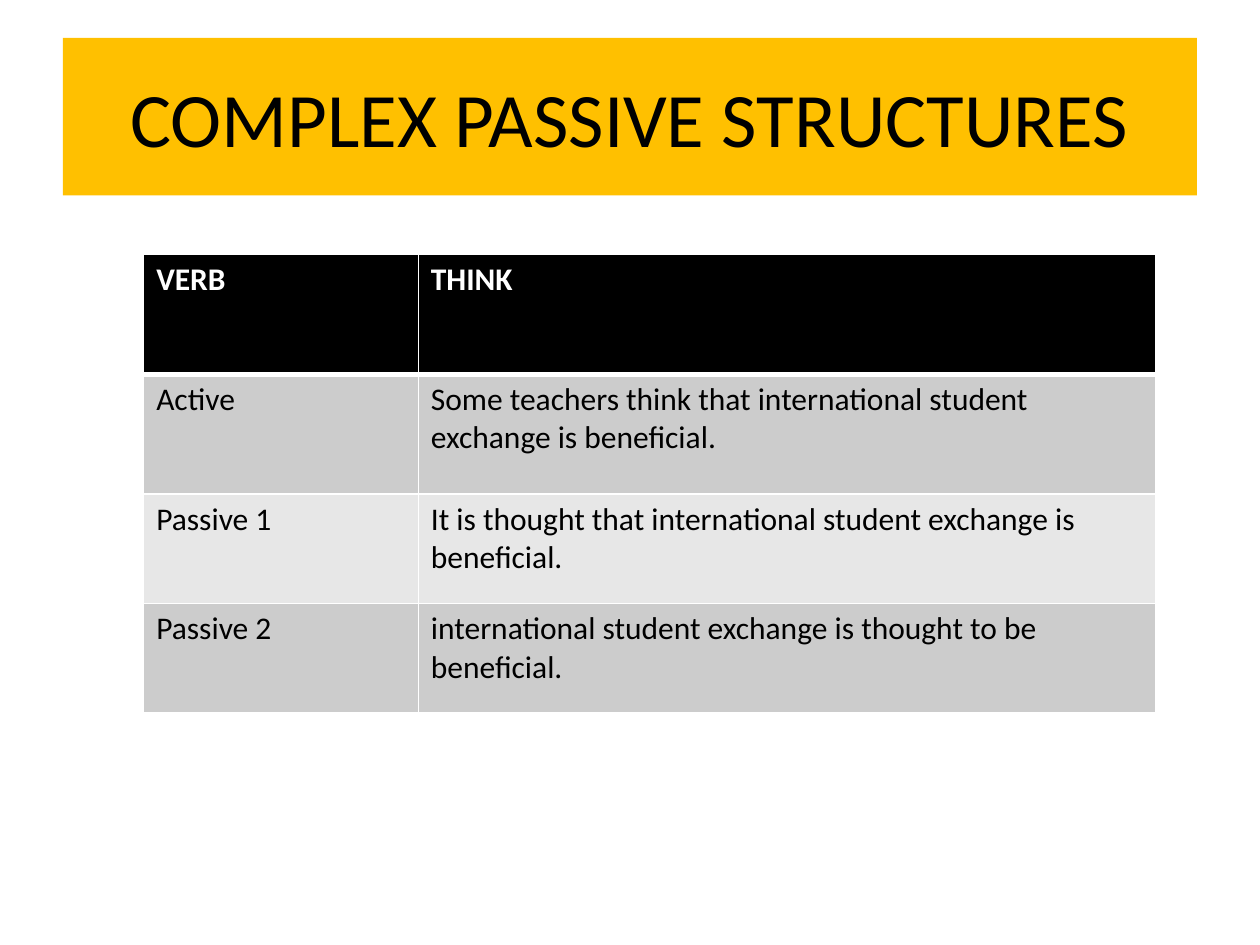
from lxml import etree
from pptx import Presentation, util as u
from pptx.dml.color import RGBColor
from pptx.enum import shapes, text
from pptx.oxml.ns import qn


def color(hex_code):
    return RGBColor.from_string(hex_code)


class SlideBuilder:
    font_name = "Calibri"
    black, white, amber = "000000", "FFFFFF", "FFC000"
    bands = ("CCCCCC", "E7E7E7")

    def __init__(self, slide):
        self.slide = slide

    def set_text(self, frame, words, hex_code, **formats):
        frame.text = words
        font = frame.paragraphs[0].runs[0].font
        for key, value in {"name": self.font_name, **formats}.items():
            setattr(font, key, value)
        font.color.rgb = color(hex_code)

    def banner(self, words, left, top, width, height):
        banner = self.slide.shapes.add_shape(
            shapes.MSO_SHAPE.RECTANGLE, *map(u.Inches, (left, top, width, height)))
        banner.shadow.inherit = False
        banner.fill.solid()
        banner.fill.fore_color.rgb = color(self.amber)
        banner.line.fill.background()
        frame = banner.text_frame
        frame.word_wrap = True
        frame.vertical_anchor = text.MSO_ANCHOR.MIDDLE
        self.set_text(frame, words, self.black, size=u.Pt(44))
        frame.paragraphs[0].alignment = text.PP_ALIGN.CENTER

    def borders(self, cell, widths):
        """Draw white cell borders; widths maps L, R, T and B to points."""
        properties = cell._tc.get_or_add_tcPr()
        for position, (side, points) in enumerate(widths.items()):
            line = etree.Element(qn(f"a:ln{side}"), w=str(u.Pt(points)))
            fill = etree.SubElement(line, qn("a:solidFill"))
            etree.SubElement(fill, qn("a:srgbClr"), val=self.white)
            properties.insert(position, line)

    def table(self, rows, left, top, widths, heights):
        frame = self.slide.shapes.add_table(
            len(rows), len(widths), u.Inches(left), u.Inches(top),
            u.Inches(sum(widths)), u.Inches(sum(heights)))
        table = frame.table
        for column, width in zip(table.columns, widths):
            column.width = u.Inches(width)
        for row, height in zip(table.rows, heights):
            row.height = u.Inches(height)
        for r, row in enumerate(rows):
            header = r == 0
            for c, words in enumerate(row):
                cell = table.cell(r, c)
                cell.fill.solid()
                cell.fill.fore_color.rgb = color(
                    self.black if header else self.bands[(r - 1) % 2])
                self.set_text(cell.text_frame, words,
                              self.white if header else self.black,
                              size=u.Pt(18), bold=header)
                self.borders(cell, {"L": 1, "R": 1, "T": 3 if r == 1 else 1,
                                    "B": 3 if header else 1})


def main():
    deck = Presentation()
    deck.slide_width, deck.slide_height = u.Inches(10), u.Inches(7.5)
    builder = SlideBuilder(deck.slides.add_slide(deck.slide_layouts[6]))
    verb_forms = [
        ("VERB", "THINK"),
        ("Active", "Some teachers think that international student exchange is beneficial."),
        ("Passive 1", "It is thought that international student exchange is beneficial."),
        ("Passive 2", "international student exchange is thought to be beneficial."),
    ]
    builder.table(verb_forms, 1.14, 2.02, (2.18, 5.85), (0.95, 0.95, 0.87, 0.87))
    builder.banner("COMPLEX PASSIVE STRUCTURES", 0.5, 0.3, 9, 1.25)
    deck.save("out.pptx")


if __name__ == "__main__":
    main()
